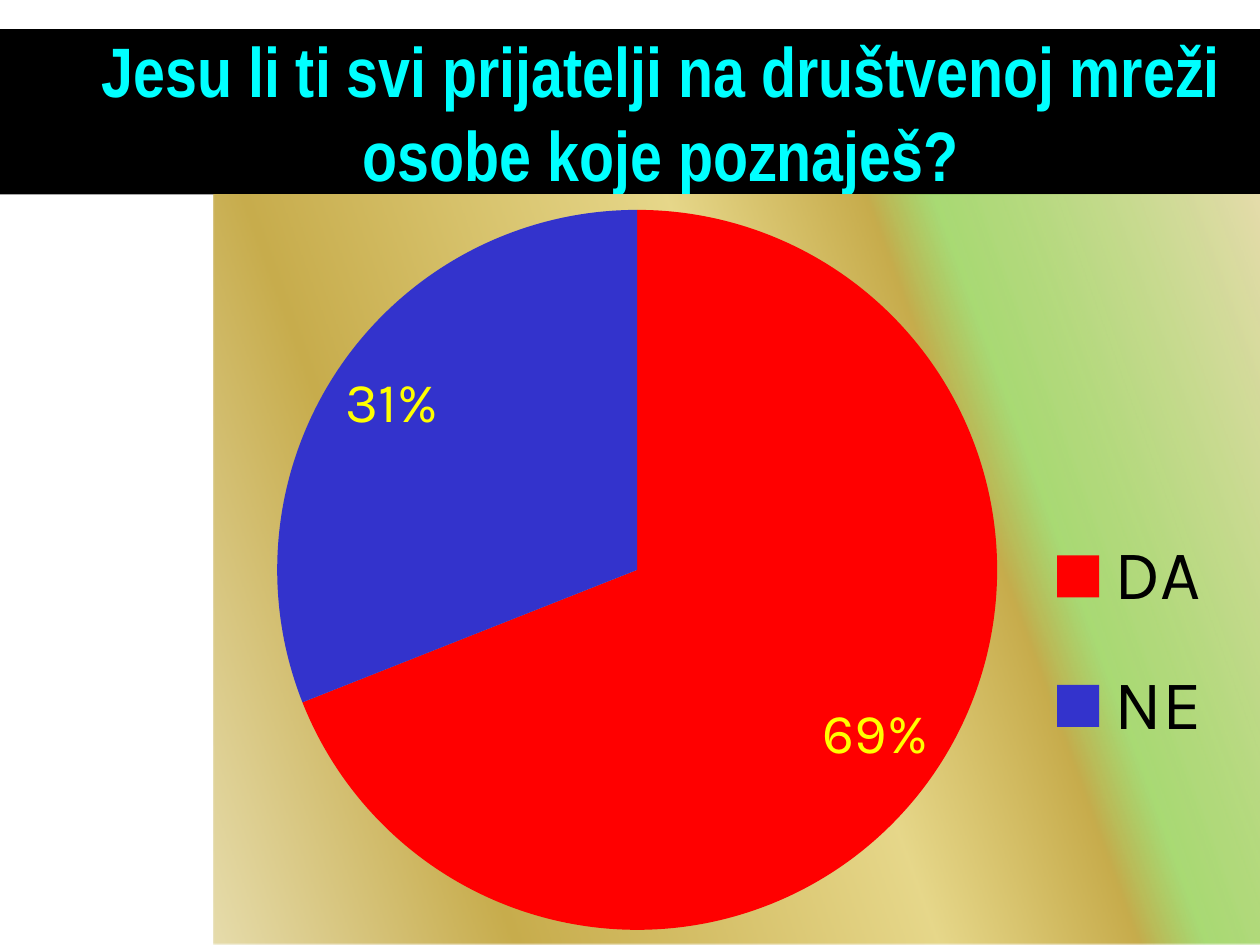
from lxml.etree import SubElement as Sub
from pptx import Presentation
from pptx.chart.data import CategoryChartData as Data
from pptx.dml.color import RGBColor as RGB
from pptx.enum.chart import XL_CHART_TYPE as Kind, XL_LABEL_POSITION as Spot, XL_LEGEND_POSITION as Side
from pptx.enum.shapes import MSO_SHAPE as Shape
from pptx.enum.text import MSO_ANCHOR as Anchor, PP_ALIGN as Align
from pptx.oxml import parse_xml
from pptx.oxml.ns import nsdecls, qn
from pptx.util import Cm, Pt

HUES = {"band": "000000", "title": "00FFFF", "text": "000000", "label": "FFFF00",
        "DA": "FF0000", "NE": "3333CC",
        "cream": "E6DCAC", "green": "92D050", "gold": "C7AC4C", "straw": "E6D78A"}
STOPS = [(0, "cream", 100), (25, "green", 79), (30, "gold", 100),
         (45, "straw", 100), (77, "gold", 100), (100, "cream", 100)]
VOTES = {"DA": 69, "NE": 31}


def hue(name):
    """Return the named colour."""
    return RGB.from_string(HUES[name])


def style(font, name, size, face):
    """Set colour, size and typeface of a font."""
    font.color.rgb = hue(name)
    font.size = Pt(size)
    font.name = face


def backdrop(angle):
    """Return chart area properties with a slanted gradient."""
    stops = "".join(
        f'<a:gs pos="{pos * 1000}"><a:srgbClr val="{HUES[name]}">'
        f'<a:alpha val="{alpha * 1000}"/></a:srgbClr></a:gs>'
        for pos, name, alpha in STOPS)
    return parse_xml(
        f'<c:spPr {nsdecls("c", "a")}><a:gradFill><a:gsLst>{stops}</a:gsLst>'
        f'<a:lin ang="{angle * 60000}" scaled="0"/></a:gradFill>'
        '<a:ln><a:noFill/></a:ln></c:spPr>')


def layout(part, box, inner=False):
    """Fix a chart part to a box given in fractions of the chart."""
    node = part.find(qn("c:layout"))
    if node is None:
        node = parse_xml(f'<c:layout {nsdecls("c")}/>')
        if inner:
            part.insert(0, node)
        else:
            part.find(qn("c:legendPos")).addnext(node)
    for child in list(node):
        node.remove(child)
    manual = Sub(node, qn("c:manualLayout"))
    if inner:
        Sub(manual, qn("c:layoutTarget")).set("val", "inner")
    for tag in ("xMode", "yMode"):
        Sub(manual, qn(f"c:{tag}")).set("val", "edge")
    for tag, val in zip("xywh", box):
        Sub(manual, qn(f"c:{tag}")).set("val", str(val))


def banner(slide, left, top, width, height):
    """Draw the black band with the question."""
    band = slide.shapes.add_shape(Shape.RECTANGLE, left, top, width, height)
    band.shadow.inherit = False
    band.fill.solid()
    band.fill.fore_color.rgb = hue("band")
    band.line.fill.background()
    frame = band.text_frame
    frame.word_wrap = True
    frame.vertical_anchor = Anchor.MIDDLE
    para = frame.paragraphs[0]
    para.text = "Jesu li ti svi prijatelji na društvenoj mreži osobe koje poznaješ?"
    para.alignment = Align.CENTER
    para._p.get_or_add_pPr().set("marL", str(Cm(1.25)))
    style(para.font, "title", 40, "Arial Narrow")
    para.font.bold = True


def pie(slide, left, top, width, height):
    """Draw the pie of answers with its legend."""
    data = Data()
    data.categories = list(VOTES)
    data.add_series("Series 1", list(VOTES.values()))
    chart = slide.shapes.add_chart(Kind.PIE, left, top, width, height, data).chart
    chart.has_title = False
    style(chart.font, "text", 18, "Karla")
    plot = chart.plots[0]
    plot.vary_by_categories = True
    for i, name in enumerate(VOTES):
        fill = plot.series[0].points[i].format.fill
        fill.solid()
        fill.fore_color.rgb = hue(name)
    plot.has_data_labels = True
    labels = plot.data_labels
    labels.show_percentage = True
    labels.show_value = False
    labels.number_format = "0%"
    labels.number_format_is_linked = False
    labels.position = Spot.INSIDE_END
    style(labels.font, "label", 32, "Karla")
    chart.has_legend = True
    legend = chart.legend
    legend.position = Side.RIGHT
    legend.include_in_layout = False
    style(legend.font, "text", 40, "Karla")
    root = chart._chartSpace
    area = root.chart.plotArea
    layout(area, (0.06, 0.02, 0.69, 0.96), inner=True)
    layout(legend._element, (0.78, 0.39, 0.19, 0.41))
    root.chart.addnext(backdrop(160))


def main():
    """Build and save the slide."""
    deck = Presentation()
    deck.slide_width, deck.slide_height = Cm(25.4), Cm(19.05)
    slide = deck.slides.add_slide(deck.slide_layouts[6])
    banner(slide, 0, Cm(0.59), Cm(25.4), Cm(3.33))
    pie(slide, Cm(4.3), Cm(3.93), Cm(21.1), Cm(15.12))
    deck.save("out.pptx")


if __name__ == "__main__":
    main()
